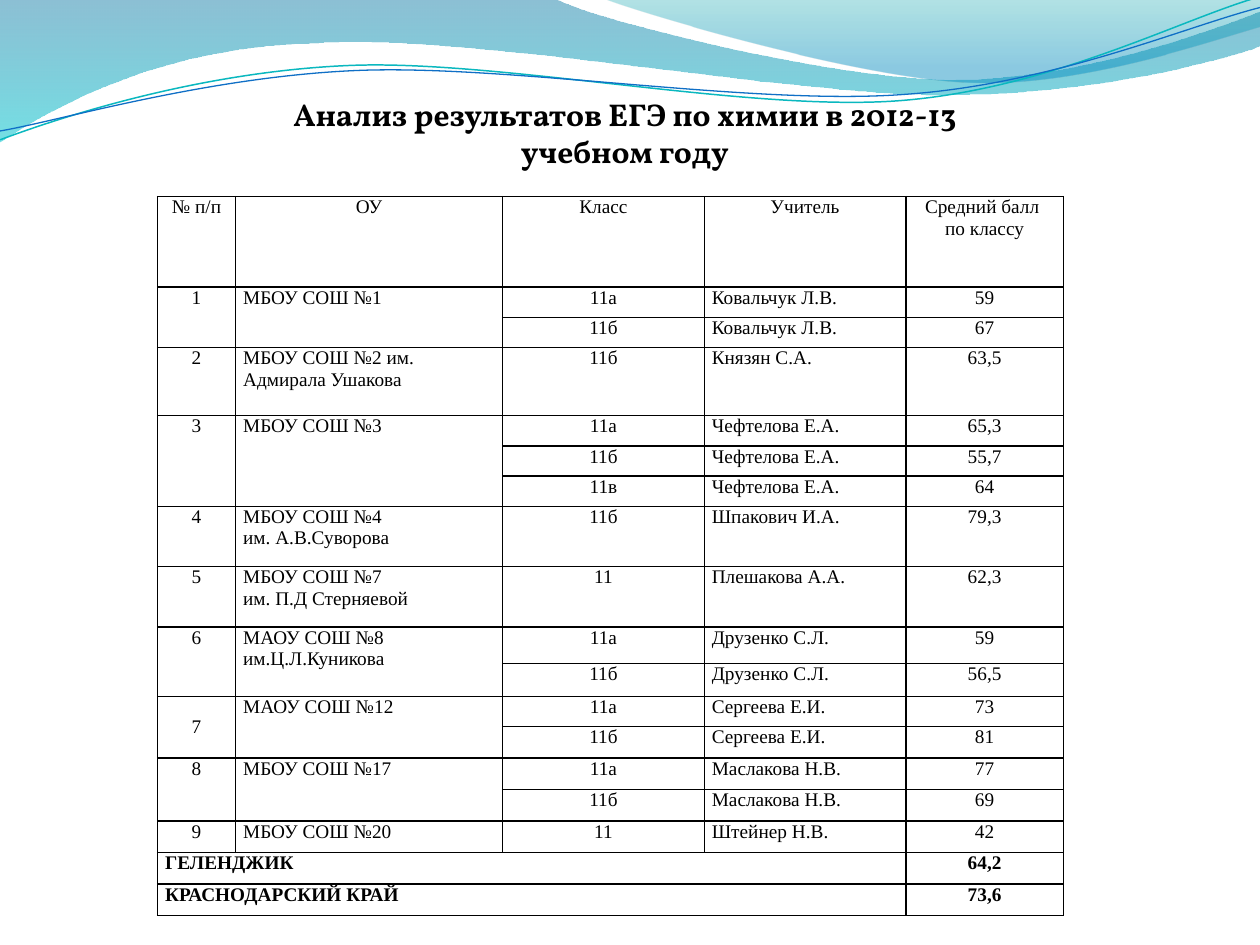
from math import cos, radians, sin

from lxml.etree import SubElement
from pptx import Presentation
from pptx.dml.color import RGBColor
from pptx.enum.text import MSO_ANCHOR as Anchor, MSO_AUTO_SIZE as AutoSize, PP_ALIGN as Align
from pptx.oxml import parse_xml
from pptx.oxml.ns import nsdecls, qn
from pptx.util import Inches, Pt

BLACK = RGBColor(0x00, 0x00, 0x00)
DEEP_BLUE = RGBColor(0x00, 0x74, 0xA1)
AQUA = RGBColor(0x00, 0xC6, 0xCF)
TEAL = RGBColor(0x00, 0xA1, 0xA9)
SKY = RGBColor(0x00, 0x8B, 0xBF)
LINE_TEAL = RGBColor(0x0A, 0xB8, 0xBF)
LINE_BLUE = RGBColor(0x0F, 0x6F, 0xC6)

LINE_TILT = -2.7
FILLED_WAVES = [
    ([(0, 0), (4.4, -0.01), (4.76, 0.17, 6.64, 0.63, 7.58, 0.63),
      (8.53, 0.63, 9.58, 0.26, 10, 0.09), (10.01, 0.36),
      (9.83, 0.44, 8.7, 0.76, 7.46, 0.75), (6.22, 0.75, 3.82, 0.28, 2.57, 0.34),
      (1.29, 0.36, 0.46, 0.83, -0.01, 1.13)],
     [(0, DEEP_BLUE, 45), (1, AQUA, 55)]),
    ([(4.79, -0.01), (5.09, 0.11, 6.82, 0.62, 7.69, 0.65),
      (8.56, 0.69, 9.61, 0.32, 10, 0.21), (10, 0)],
     [(0, TEAL, 30), (0.8, SKY, 45)]),
]
LINE_WAVES = [
    ([(0, 1.11), (0.48, 0.93, 1.58, 0.57, 2.77, 0.52),
      (3.95, 0.47, 5.93, 0.89, 7.13, 0.8), (8.33, 0.71, 9.38, 0.15, 9.98, -0.02)],
     (4.99, 0.58), LINE_TEAL, 0.85),
    ([(0, 1.04), (0.47, 0.96, 1.64, 0.61, 2.83, 0.56),
      (4.03, 0.51, 5.97, 0.84, 7.17, 0.75), (8.36, 0.67, 9.41, 0.21, 10, 0.06)],
     (5, 0.59), LINE_BLUE, 0.75),
]

TITLE = "Анализ результатов ЕГЭ по химии в 2012-13 учебном году"
HEADINGS = ["№ п/п", "ОУ", "Класс", "Учитель", "Средний балл \nпо классу"]
SCHOOLS = [
    ("МБОУ СОШ №1", [("11а", "Ковальчук Л.В.", "59"), ("11б", "Ковальчук Л.В.", "67")]),
    ("МБОУ СОШ №2 им. Адмирала Ушакова", [("11б", "Князян С.А.", "63,5")]),
    ("МБОУ СОШ №3", [("11а", "Чефтелова Е.А.", "65,3"), ("11б", "Чефтелова Е.А.", "55,7"),
                     ("11в", "Чефтелова Е.А.", "64")]),
    ("МБОУ СОШ №4\nим. А.В.Суворова", [("11б", "Шпакович И.А.", "79,3")]),
    ("МБОУ СОШ №7\nим. П.Д Стерняевой", [("11", "Плешакова А.А.", "62,3")]),
    ("МАОУ СОШ №8 им.Ц.Л.Куникова", [("11а", "Друзенко С.Л.", "59"),
                                     ("11б", "Друзенко С.Л.", "56,5")]),
    ("МАОУ СОШ №12", [("11а", "Сергеева Е.И.", "73"), ("11б", "Сергеева Е.И.", "81")]),
    ("МБОУ СОШ №17", [("11а", "Маслакова Н.В.", "77"), ("11б", "Маслакова Н.В.", "69")]),
    ("МБОУ СОШ №20", [("11", "Штейнер Н.В.", "42")]),
]
TOTALS = [("ГЕЛЕНДЖИК", "64,2"), ("КРАСНОДАРСКИЙ КРАЙ", "73,6")]
COLUMN_WIDTHS = [0.62, 2.12, 1.6, 1.6, 1.25]
ROW_HEIGHTS = [0.72, 0.24, 0.24, 0.54, 0.24, 0.24, 0.24, 0.48, 0.48,
               0.29, 0.26, 0.24] + [0.25] * 6

TITLE_FONT = {"name": "Vollkorn", "size": Pt(18), "bold": True}
CELL_FONT = {"name": "Times New Roman", "size": Pt(11), "bold": False}
TOTAL_FONT = {**CELL_FONT, "bold": True}
CELL_FORMAT = {"margin_left": Inches(0.06), "margin_right": Inches(0.06),
               "margin_top": 0, "margin_bottom": 0}


def apply_format(target, values):
    """Set each named attribute on the target."""
    for name, value in values.items():
        setattr(target, name, value)


def write_text(frame, text, font, align):
    """Fill a text frame with evenly formatted paragraphs."""
    frame.text = text
    for paragraph in frame.paragraphs:
        paragraph.alignment = align
        for run in paragraph.runs:
            apply_format(run.font, font)
            run.font.color.rgb = BLACK


def turn(segment, center, degrees):
    """Turn the points of a segment clockwise about a center."""
    angle = radians(degrees)
    turned = []
    for x, y in zip(segment[::2], segment[1::2]):
        dx, dy = x - center[0], y - center[1]
        turned += [center[0] + dx * cos(angle) - dy * sin(angle),
                   center[1] + dx * sin(angle) + dy * cos(angle)]
    return turned


def add_curve(slide, left, top, segments, close):
    """Draw straight and cubic segments relative to the given corner."""
    nodes = [[(left + Inches(x), top + Inches(y)) for x, y in zip(segment[::2], segment[1::2])]
             for segment in segments]
    builder = slide.shapes.build_freeform(*nodes[0][0])
    builder.add_line_segments([node[-1] for node in nodes[1:]], close=close)
    curve = builder.convert_to_shape()
    curve.shadow.inherit = False
    for straight, node in zip(list(curve.element.iter(qn("a:lnTo"))), nodes[1:]):
        if len(node) == 3:
            points = "".join(f'<a:pt x="{x - curve.left}" y="{y - curve.top}"/>'
                             for x, y in node)
            straight.getparent().replace(straight, parse_xml(
                f'<a:cubicBezTo {nsdecls("a")}>{points}</a:cubicBezTo>'))
    return curve


def add_waves(slide, left, top):
    """Draw the wave band at the top of the slide."""
    for segments, stops in FILLED_WAVES:
        wave = add_curve(slide, left, top, segments, True)
        wave.line.fill.background()
        wave.fill.gradient()
        wave.fill.gradient_angle = 270
        for stop, (position, color, _) in zip(wave.fill.gradient_stops, stops):
            stop.position = position
            stop.color.rgb = color
        for color_node, (_, _, opacity) in zip(list(wave.element.iter(qn("a:srgbClr"))), stops):
            SubElement(color_node, qn("a:alpha"), val=str(opacity * 1000))
    for segments, center, color, width in LINE_WAVES:
        level = [turn(segment, center, -LINE_TILT) for segment in segments]
        wave = add_curve(slide, left, top, level, False)
        wave.rotation = LINE_TILT
        wave.fill.background()
        wave.line.color.rgb = color
        wave.line.width = Pt(width)


def add_title(slide, left, top, width, height):
    """Place and format the title."""
    title = slide.shapes.title
    apply_format(title, {"left": left, "top": top, "width": width, "height": height})
    apply_format(title.text_frame, {"word_wrap": True, "auto_size": AutoSize.NONE,
                                    "vertical_anchor": Anchor.TOP})
    write_text(title.text_frame, TITLE, TITLE_FONT, Align.CENTER)


def add_borders(cell):
    """Give a cell thin black edges."""
    properties = cell._tc.get_or_add_tcPr()
    for index, side in enumerate("LRTB"):
        properties.insert(index, parse_xml(
            f'<a:ln{side} {nsdecls("a")} w="{Pt(1)}"><a:solidFill>'
            f'<a:srgbClr val="{BLACK}"/></a:solidFill></a:ln{side}>'))


def add_results(slide, left, top, width, height):
    """Build the table of exam results."""
    table = slide.shapes.add_table(len(ROW_HEIGHTS), len(COLUMN_WIDTHS),
                                   left, top, width, height).table
    apply_format(table, {"first_row": False, "horz_banding": False})
    for column, column_width in zip(table.columns, COLUMN_WIDTHS):
        column.width = Inches(column_width)
    for row, row_height in zip(table.rows, ROW_HEIGHTS):
        row.height = Inches(row_height)
    for cell in table.iter_cells():
        apply_format(cell, CELL_FORMAT)
        cell.fill.background()
        add_borders(cell)

    def put(row, column, text, align=Align.CENTER, font=CELL_FONT):
        write_text(table.cell(row, column).text_frame, text, font, align)

    for column, heading in enumerate(HEADINGS):
        put(0, column, heading)
    row = 1
    for number, (school, classes) in enumerate(SCHOOLS, 1):
        if len(classes) > 1:
            for column in (0, 1):
                table.cell(row, column).merge(table.cell(row + len(classes) - 1, column))
        put(row, 0, str(number))
        put(row, 1, school, Align.LEFT)
        if school == "МАОУ СОШ №12":
            table.cell(row, 0).vertical_anchor = Anchor.MIDDLE
        for grade, teacher, score in classes:
            put(row, 2, grade)
            put(row, 3, teacher, Align.LEFT)
            put(row, 4, score)
            row += 1
    for row, (region, score) in enumerate(TOTALS, row):
        table.cell(row, 0).merge(table.cell(row, 3))
        put(row, 0, region, Align.LEFT, TOTAL_FONT)
        put(row, 4, score, font=TOTAL_FONT)


def main():
    """Build and save the slide."""
    deck = Presentation()
    apply_format(deck, {"slide_width": Inches(10), "slide_height": Inches(7.5)})
    slide = deck.slides.add_slide(deck.slide_layouts[5])
    add_waves(slide, 0, 0)
    add_results(slide, Inches(1.25), Inches(1.56), Inches(7.19), Inches(5.7))
    add_title(slide, Inches(2.11), Inches(0.7), Inches(5.7), Inches(0.7))
    deck.save("out.pptx")


if __name__ == "__main__":
    main()
